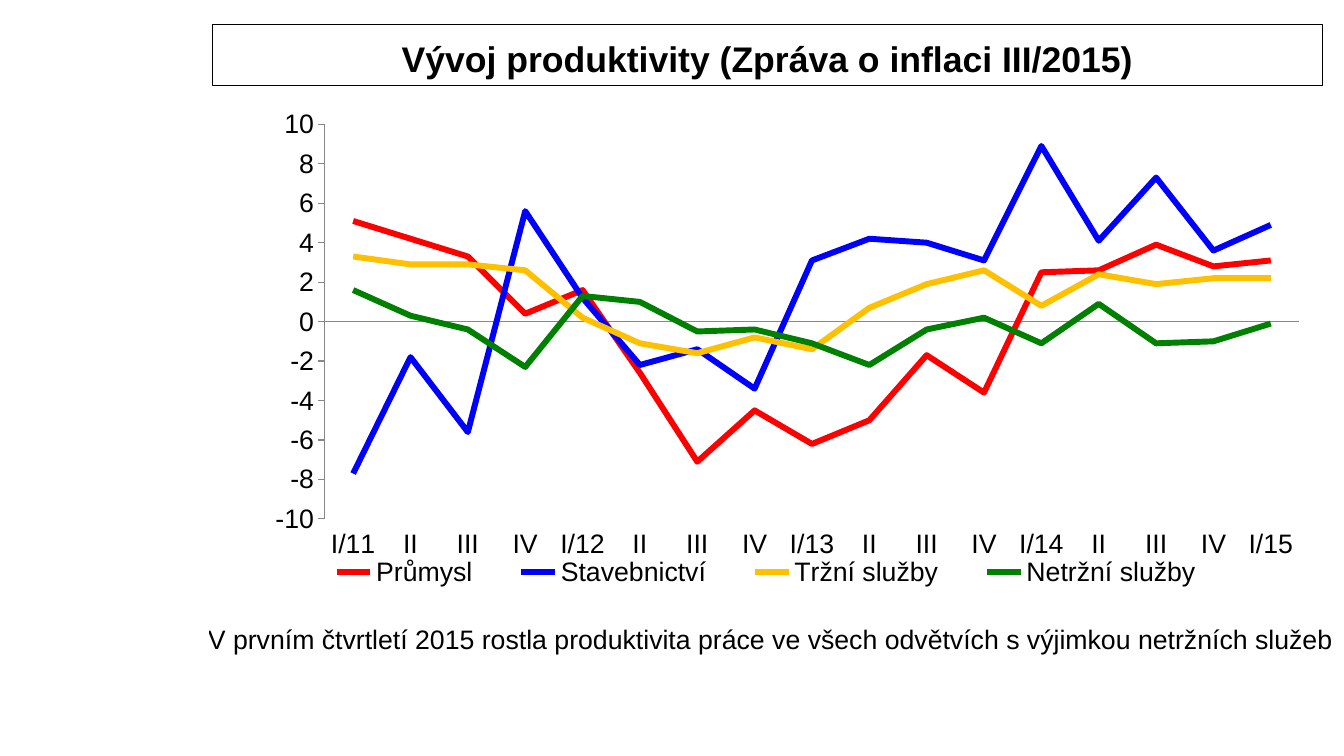
import pptx
import pptx.chart.data
import pptx.dml.color
import pptx.enum.chart
import pptx.enum.text
import pptx.oxml
import pptx.oxml.ns
import pptx.util
from pptx.util import Cm

FONT = "Arial"
COLORS = {
    "text": "000000",
    "axis": "878787",
    "Průmysl": "FF0000",
    "Stavebnictví": "0000FF",
    "Tržní služby": "FFC000",
    "Netržní služby": "008000",
}
QUARTERS = ["I", "II", "III", "IV"]
PERIODS = [
    f"{quarter}/{year}" if quarter == "I" else quarter
    for year in range(11, 15)
    for quarter in QUARTERS
] + ["I/15"]
PRODUCTIVITY = {
    "Průmysl": [5.1, 4.2, 3.3, 0.4, 1.6, -2.6, -7.1, -4.5, -6.2,
                -5, -1.7, -3.6, 2.5, 2.6, 3.9, 2.8, 3.1],
    "Stavebnictví": [-7.7, -1.8, -5.6, 5.6, 1.2, -2.2, -1.4, -3.4, 3.1,
                     4.2, 4, 3.1, 8.9, 4.1, 7.3, 3.6, 4.9],
    "Tržní služby": [3.3, 2.9, 2.9, 2.6, 0.2, -1.1, -1.6, -0.8, -1.4,
                     0.7, 1.9, 2.6, 0.8, 2.4, 1.9, 2.2, 2.2],
    "Netržní služby": [1.6, 0.3, -0.4, -2.3, 1.3, 1, -0.5, -0.4, -1.1,
                       -2.2, -0.4, 0.2, -1.1, 0.9, -1.1, -1, -0.1],
}


def color(name):
    return pptx.dml.color.RGBColor.from_string(COLORS[name])


def style_font(font, size, bold=False):
    font.name = FONT
    font.size = pptx.util.Pt(size)
    font.bold = bold
    font.color.rgb = color("text")


def style_line(line, name, width):
    line.color.rgb = color(name)
    line.width = pptx.util.Pt(width)


def add_title(slide, left, top, width, height):
    title = slide.shapes.title
    title.left, title.top, title.width, title.height = left, top, width, height
    style_line(title.line, "text", 0.75)
    frame = title.text_frame
    frame.text = "Vývoj produktivity (Zpráva o inflaci III/2015)"
    frame.word_wrap = False
    frame.auto_size = pptx.enum.text.MSO_AUTO_SIZE.NONE
    frame.vertical_anchor = pptx.enum.text.MSO_ANCHOR.BOTTOM
    paragraph = frame.paragraphs[0]
    paragraph.alignment = pptx.enum.text.PP_ALIGN.CENTER
    style_font(paragraph.font, 24, True)


def set_layout(parent, position, target, x, y, width, height):
    for layout in parent.findall(pptx.oxml.ns.qn("c:layout")):
        parent.remove(layout)
    inner = '<c:layoutTarget val="inner"/>' if target == "inner" else ""
    sizes = {"x": x, "y": y, "w": width, "h": height}
    values = "".join(f'<c:{key} val="{value}"/>' for key, value in sizes.items())
    parent.insert(position, pptx.oxml.parse_xml(
        f'<c:layout {pptx.oxml.ns.nsdecls("c")}><c:manualLayout>{inner}'
        f'<c:xMode val="edge"/><c:yMode val="edge"/>{values}'
        "</c:manualLayout></c:layout>"
    ))


def add_productivity_chart(slide, left, top, width, height):
    data = pptx.chart.data.CategoryChartData(number_format="0.0")
    data.categories = PERIODS
    for name, values in PRODUCTIVITY.items():
        data.add_series(name, values)
    chart = slide.shapes.add_chart(
        pptx.enum.chart.XL_CHART_TYPE.LINE, left, top, width, height, data
    ).chart
    style_font(chart.font, 18)
    chart.has_title = False
    chart.plots[0].vary_by_categories = False
    for series in chart.plots[0].series:
        series.smooth = False
        series.marker.style = pptx.enum.chart.XL_MARKER_STYLE.NONE
        style_line(series.format.line, series.name, 4)

    tick_mark = pptx.enum.chart.XL_TICK_MARK
    for axis, mark in ((chart.category_axis, tick_mark.NONE),
                       (chart.value_axis, tick_mark.OUTSIDE)):
        axis.has_major_gridlines = False
        axis.major_tick_mark = mark
        axis.minor_tick_mark = tick_mark.NONE
        style_line(axis.format.line, "axis", 0.75)
        style_font(axis.tick_labels.font, 18)
    chart.category_axis.tick_label_position = pptx.enum.chart.XL_TICK_LABEL_POSITION.LOW
    chart.value_axis.minimum_scale = -10
    chart.value_axis.maximum_scale = 10
    chart.value_axis.major_unit = 2
    chart.value_axis.tick_labels.number_format = "0"
    chart.value_axis.tick_labels.number_format_is_linked = False

    chart.has_legend = True
    chart.legend.position = pptx.enum.chart.XL_LEGEND_POSITION.BOTTOM
    chart.legend.include_in_layout = False
    style_font(chart.legend.font, 18)
    plot_area = chart.element.find(".//" + pptx.oxml.ns.qn("c:plotArea"))
    legend = chart.element.find(".//" + pptx.oxml.ns.qn("c:legend"))
    set_layout(plot_area, 0, "inner", 0.066, 0.05, 0.914, 0.758)
    set_layout(legend, 1, "outer", 0.04, 0.87, 0.88, 0.08)


def add_comment(slide, left, top, width, height):
    table = slide.shapes.add_table(1, 1, left, top, width, height).table
    table.first_row = False
    table.horz_banding = False
    cell = table.cell(0, 0)
    cell.fill.background()
    cell.margin_left = cell.margin_right = cell.margin_top = cell.margin_bottom = 0
    cell.vertical_anchor = pptx.enum.text.MSO_ANCHOR.BOTTOM
    cell.text = ("V prvním čtvrtletí 2015 rostla produktivita práce "
                 "ve všech odvětvích s výjimkou netržních služeb")
    style_font(cell.text_frame.paragraphs[0].font, 18)


def main():
    presentation = pptx.Presentation()
    presentation.slide_width = Cm(32)
    presentation.slide_height = Cm(18)
    slide = presentation.slides.add_slide(presentation.slide_layouts[5])
    add_title(slide, Cm(5.05), Cm(0.58), Cm(26.44), Cm(1.45))
    add_productivity_chart(slide, Cm(6.05), Cm(2.34), Cm(25.4), Cm(12.4))
    add_comment(slide, Cm(4.95), Cm(14.58), Cm(27.05), Cm(1.02))
    presentation.save("out.pptx")


if __name__ == "__main__":
    main()
